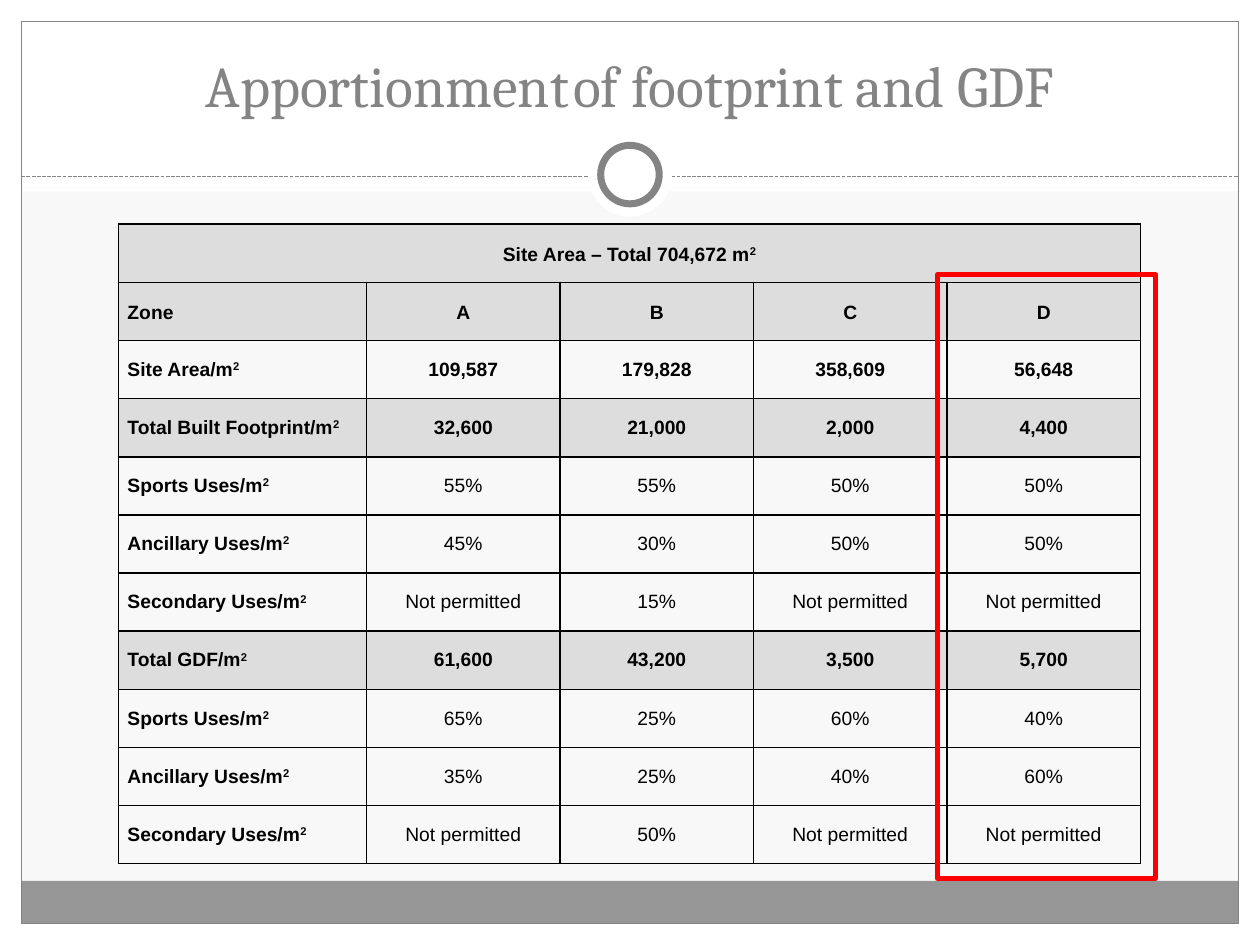
from lxml.etree import SubElement
from pptx import Presentation
from pptx.dml.color import RGBColor
from pptx.enum.dml import MSO_LINE
from pptx.enum.shapes import MSO_CONNECTOR, MSO_SHAPE
from pptx.enum.text import MSO_ANCHOR, PP_ALIGN
from pptx.oxml import parse_xml
from pptx.oxml.ns import nsdecls, qn
from pptx.util import Cm, Pt

WHITE = RGBColor(0xFF, 0xFF, 0xFF)
BLACK = RGBColor(0, 0, 0)
PALE = RGBColor(0xF8, 0xF8, 0xF8)
SHADE = RGBColor(0xDD, 0xDD, 0xDD)
BAND = RGBColor(0x96, 0x96, 0x96)
GREY = RGBColor(0x84, 0x84, 0x84)
RED = RGBColor(0xFF, 0, 0)

WIDTH, HEIGHT, EDGE = 25.4, 19.05, 0.43
ROWS = [
    ["Site Area – Total 704,672 m2", "", "", "", ""],
    ["Zone", "A", "B", "C", "D"],
    ["Site Area/m2", "109,587", "179,828", "358,609", "56,648"],
    ["Total Built Footprint/m2", "32,600", "21,000", "2,000", "4,400"],
    ["Sports Uses/m2", "55%", "55%", "50%", "50%"],
    ["Ancillary Uses/m2", "45%", "30%", "50%", "50%"],
    ["Secondary Uses/m2", "Not permitted", "15%", "Not permitted", "Not permitted"],
    ["Total GDF/m2", "61,600", "43,200", "3,500", "5,700"],
    ["Sports Uses/m2", "65%", "25%", "60%", "40%"],
    ["Ancillary Uses/m2", "35%", "25%", "40%", "60%"],
    ["Secondary Uses/m2", "Not permitted", "50%", "Not permitted", "Not permitted"],
]
SHADED = {0, 1, 3, 7}
BOLD = SHADED | {2}


def add_form(slide, kind, box, fill=None, line=None, weight=0.75):
    form = slide.shapes.add_shape(kind, *map(Cm, box))
    form.shadow.inherit = False
    if fill is None:
        form.fill.background()
    else:
        form.fill.solid()
        form.fill.fore_color.rgb = fill
    if line is None:
        form.line.fill.background()
    else:
        form.line.color.rgb = line
        form.line.width = Pt(weight)
    return form


def add_frame(slide, box):
    left, top, width, height = box
    right, base = left + width, top + height
    rule, foot = top + 3.56, 0.86
    for part in (
        (left, base - EDGE, width, EDGE),
        (left, top, width, 3.86),
        (left, top, EDGE, height),
        (right - EDGE, top, EDGE, height),
    ):
        add_form(slide, MSO_SHAPE.RECTANGLE, part, WHITE)
    inner = width - 2 * EDGE
    add_form(slide, MSO_SHAPE.RECTANGLE,
             (left + EDGE, base - EDGE - foot, inner, foot), BAND)
    add_form(slide, MSO_SHAPE.RECTANGLE,
             (left + EDGE, top + EDGE, inner, height - 2 * EDGE), line=GREY)
    dash = slide.shapes.add_connector(
        MSO_CONNECTOR.STRAIGHT, Cm(left + EDGE), Cm(rule), Cm(right - EDGE), Cm(rule))
    dash.line.color.rgb = GREY
    dash.line.width = Pt(0.75)
    dash.line.dash_style = MSO_LINE.SQUARE_DOT
    SubElement(dash._element.spPr, qn("a:effectLst"))
    for size, line in ((1.7, None), (1.18, GREY)):
        add_form(slide, MSO_SHAPE.OVAL,
                 (left + (width - size) / 2, top + 3.52 - size / 2, size, size),
                 WHITE, line, 4)


def set_title(slide, box):
    title = slide.shapes.title
    title.left, title.top, title.width, title.height = map(Cm, box)
    slide.shapes._spTree.append(title._element)
    title.text_frame.vertical_anchor = MSO_ANCHOR.MIDDLE
    para = title.text_frame.paragraphs[0]
    para.alignment = PP_ALIGN.CENTER
    para.font.name = "Cambria"
    para.font.size = Pt(33)
    para.font.color.rgb = GREY
    for text in ("Apportionment", " ", "of footprint and GDF"):
        run = para.add_run()
        run.text = text
        if text == " ":
            run.font.size = Pt(10.5)


def add_borders(cell):
    props = cell._tc.get_or_add_tcPr()
    for side in ("lnL", "lnR", "lnT", "lnB"):
        props.append(parse_xml(
            f'<a:{side} {nsdecls("a")} w="{Pt(1)}"><a:solidFill>'
            f'<a:srgbClr val="{BLACK}"/></a:solidFill></a:{side}>'))


def fill_cell(cell, text, row, col):
    cell.margin_left = cell.margin_right = Cm(0.18)
    cell.margin_top = cell.margin_bottom = 0
    cell.vertical_anchor = MSO_ANCHOR.MIDDLE
    add_borders(cell)
    if row in SHADED:
        cell.fill.solid()
        cell.fill.fore_color.rgb = SHADE
    else:
        cell.fill.background()
    para = cell.text_frame.paragraphs[0]
    para.alignment = PP_ALIGN.CENTER if col or row == 0 else PP_ALIGN.LEFT
    para.space_before = Pt(12 if row < 2 else 6)
    if row:
        para.space_after = Pt(12 if row == 1 else 6)
    if row < 2:
        para.line_spacing = 1.15
    para.font.name = "Arial"
    para.font.size = Pt(11)
    para.font.bold = col == 0 or row in BOLD
    para.font.color.rgb = BLACK
    if not text:
        return
    unit = text.endswith("m2")
    para.add_run().text = text[:-1] if unit else text
    if unit:
        power = para.add_run()
        power.text = "2"
        power.font._element.set("baseline", "30000")


def add_zones(slide, box):
    table = slide.shapes.add_table(len(ROWS), len(ROWS[0]), *map(Cm, box)).table
    table.first_row = table.horz_banding = False
    first = 5
    for col, column in enumerate(table.columns):
        column.width = Cm((box[2] - first) / 4 if col else first)
    for row, texts in enumerate(ROWS):
        table.rows[row].height = Cm(box[3] / len(ROWS))
        for col, text in enumerate(texts):
            fill_cell(table.cell(row, col), text, row, col)
    table.cell(0, 0).merge(table.cell(0, 4))


def main():
    deck = Presentation()
    deck.slide_width, deck.slide_height = Cm(WIDTH), Cm(HEIGHT)
    slide = deck.slides.add_slide(deck.slide_layouts[5])
    slide.background.fill.solid()
    slide.background.fill.fore_color.rgb = PALE
    add_frame(slide, (0, 0, WIDTH, HEIGHT))
    set_title(slide, (0.85, 0.64, 23.7, 2.11))
    add_zones(slide, (2.39, 4.52, 20.6, 12.9))
    add_form(slide, MSO_SHAPE.RECTANGLE, (18.9, 5.54, 4.39, 12.17), line=RED, weight=3)
    deck.save("out.pptx")


if __name__ == "__main__":
    main()
